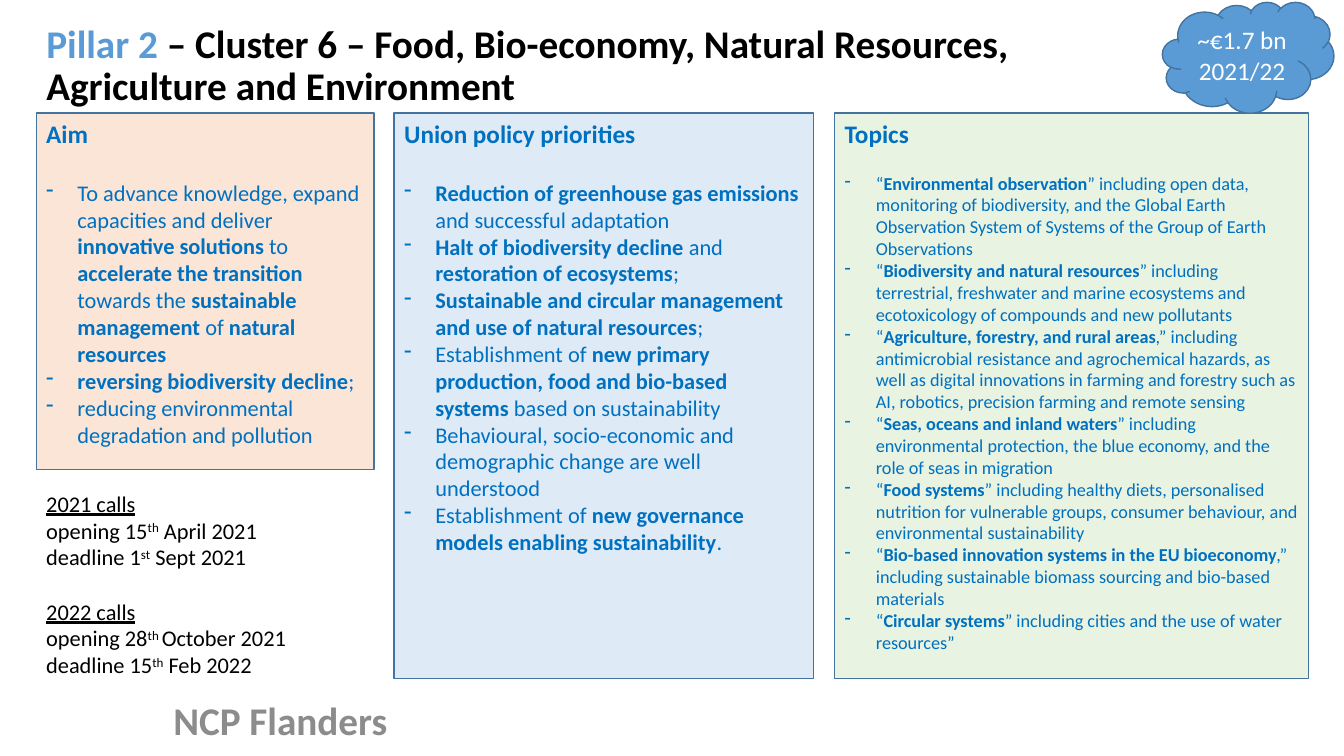
import pptx
import pptx.util
import pptx.dml.color
import pptx.enum.shapes
import pptx.enum.text
import pptx.oxml
import pptx.oxml.ns
from pptx.util import Inches

RGBColor = pptx.dml.color.RGBColor
SHAPE = pptx.enum.shapes.MSO_SHAPE
ALIGN = pptx.enum.text.PP_ALIGN
ANCHOR = pptx.enum.text.MSO_ANCHOR

BLACK = RGBColor(0x00, 0x00, 0x00)
WHITE = RGBColor(0xFF, 0xFF, 0xFF)
GREY = RGBColor(0x8C, 0x8C, 0x8C)
SKY = RGBColor(0x5B, 0x9B, 0xD5)
BLUE = RGBColor(0x00, 0x70, 0xC0)
OUTLINE = RGBColor(0x43, 0x73, 0x9E)
PEACH = RGBColor(0xFB, 0xE5, 0xD6)
PALE_BLUE = RGBColor(0xDE, 0xEB, 0xF7)
PALE_GREEN = RGBColor(0xE8, 0xF3, 0xE1)


def add_run(para, text, size, colour, bold=False):
    span = para.add_run()
    span.text = text
    span.font.name = "Calibri"
    span.font.size = pptx.util.Pt(size)
    span.font.bold = bold
    span.font.color.rgb = colour
    return span


def add_panel(preset, left, top, width, height, fill):
    panel = slide.shapes.add_shape(
        preset, Inches(left), Inches(top), Inches(width), Inches(height))
    panel.shadow.inherit = False
    panel.fill.solid()
    panel.fill.fore_color.rgb = fill
    panel.line.color.rgb = OUTLINE
    panel.line.width = pptx.util.Pt(1)
    panel.text_frame.word_wrap = True
    return panel.text_frame


deck = pptx.Presentation()
deck.slide_width = Inches(13.33)
deck.slide_height = Inches(7.5)
slide = deck.slides.add_slide(deck.slide_layouts[5])

# Footer
footer = slide.shapes.add_textbox(Inches(0.53), Inches(6.94), Inches(4.5), Inches(0.4))
footer.text_frame.word_wrap = True
footer.text_frame.vertical_anchor = ANCHOR.MIDDLE
para = footer.text_frame.paragraphs[0]
para.alignment = ALIGN.CENTER
add_run(para, "NCP Flanders", 28, GREY, True)

# Title
title = slide.shapes.title
title.left, title.top = Inches(0.36), Inches(0.19)
title.width, title.height = Inches(12.14), Inches(0.51)
title.text_frame.word_wrap = True
title.text_frame.auto_size = pptx.enum.text.MSO_AUTO_SIZE.NONE
title.text_frame.vertical_anchor = ANCHOR.TOP
para = title.text_frame.paragraphs[0]
para.alignment = ALIGN.LEFT
para.line_spacing = 0.9
add_run(para, "Pillar 2", 28, SKY, True)
add_run(para, " – Cluster 6 – Food, Bio-economy, Natural Resources,", 28, BLACK, True)
para.add_line_break()
add_run(para, "Agriculture and Environment", 28, BLACK, True)

# Columns: heading, left, width, height, fill, text size, gap in points, items
# Asterisks in an item switch bold on and off.
columns = [
    ("Aim", 0.36, 3.35, 3.54, PEACH, 16, 22, [
        "To advance knowledge, expand capacities and deliver *innovative solutions* to "
        "*accelerate the transition *towards the *sustainable management *of* natural resources*",
        "*reversing biodiversity decline*;",
        "reducing environmental degradation and pollution",
    ]),
    ("Union policy priorities", 3.91, 4.16, 5.61, PALE_BLUE, 16, 22, [
        "*Reduction of greenhouse gas emissions *and successful adaptation",
        "*Halt of biodiversity decline *and *restoration of ecosystems*;",
        "*Sustainable and circular management and use of natural resources*;",
        "Establishment of *new primary production, food and bio-based systems *"
        "based on sustainability",
        "Behavioural, socio-economic and demographic change are well understood",
        "Establishment of *new governance models enabling sustainability*.",
    ]),
    ("Topics", 8.28, 4.7, 5.61, PALE_GREEN, 13, 17, [
        "“*Environmental observation*” including open data, monitoring of biodiversity, and the "
        "Global Earth Observation System of Systems of the Group of Earth Observations",
        "“*Biodiversity and natural resources*” including terrestrial, freshwater and marine "
        "ecosystems and ecotoxicology of compounds and new pollutants",
        "“*Agriculture, forestry, and rural areas*,” including antimicrobial resistance and "
        "agrochemical hazards, as well as digital innovations in farming and forestry such as "
        "AI, robotics, precision farming and remote sensing",
        "“*Seas, oceans and inland waters*” including environmental protection, the blue "
        "economy, and the role of seas in migration",
        "“*Food systems*” including healthy diets, personalised nutrition for vulnerable "
        "groups, consumer behaviour, and environmental sustainability",
        "“*Bio-based innovation systems in the EU bioeconomy*,” including sustainable biomass "
        "sourcing and bio-based materials",
        "“*Circular systems*” including cities and the use of water resources”",
    ]),
]
for heading, left, width, height, fill, size, gap, items in columns:
    frame = add_panel(SHAPE.RECTANGLE, left, 1.12, width, height, fill)
    frame.vertical_anchor = ANCHOR.TOP
    para = frame.paragraphs[0]
    para.alignment = ALIGN.LEFT
    para.space_after = pptx.util.Pt(gap)
    add_run(para, heading, 18, BLUE, True)
    for item in items:
        para = frame.add_paragraph()
        para.alignment = ALIGN.LEFT
        properties = para._p.get_or_add_pPr()
        properties.set("marL", str(Inches(0.31)))
        properties.set("indent", str(-Inches(0.31)))
        bullet = pptx.oxml.parse_xml(
            '<a:buChar %s char="-"/>' % pptx.oxml.ns.nsdecls("a"))
        properties.append(bullet)
        for index, part in enumerate(item.split("*")):
            if part:
                add_run(para, part, size, BLUE, index % 2 == 1)

# Budget cloud
frame = add_panel(SHAPE.CLOUD, 11.53, 0.02, 1.7, 1.1, SKY)
frame.vertical_anchor = ANCHOR.MIDDLE
para = frame.paragraphs[0]
para.alignment = ALIGN.CENTER
add_run(para, "~€1.7 bn 2021/22", 18, WHITE)

# Call dates: carets switch superscript on and off
calls = [
    ("2021 calls", "opening 15^th^ April 2021", "deadline 1^st^ Sept 2021"),
    ("2022 calls", "opening 28^th ^October 2021", "deadline 15^th^ Feb 2022"),
]
dates = slide.shapes.add_textbox(Inches(0.36), Inches(4.81), Inches(3.69), Inches(2.05))
dates.text_frame.word_wrap = True
para = dates.text_frame.paragraphs[0]
for number, (name, *lines) in enumerate(calls):
    if number:
        para = dates.text_frame.add_paragraph()
        para.space_before = pptx.util.Pt(19.5)
    add_run(para, name, 16, BLACK).font.underline = True
    for line in lines:
        para = dates.text_frame.add_paragraph()
        for index, part in enumerate(line.split("^")):
            span = add_run(para, part, 16, BLACK)
            if index % 2:
                span._r.get_or_add_rPr().set("baseline", "30000")

deck.save("out.pptx")
